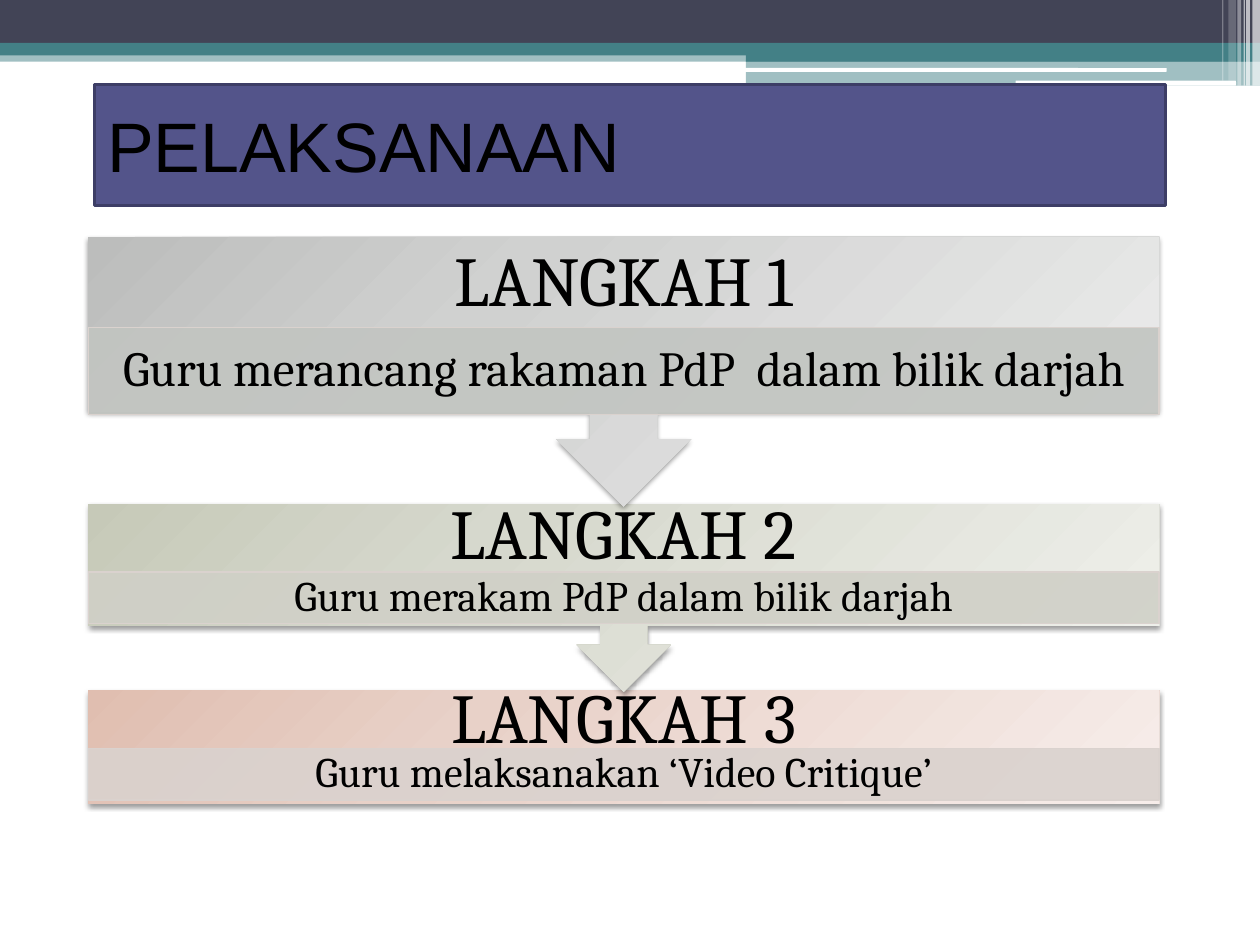
"""Build the PELAKSANAAN slide: three steps joined by arrows under a banded header."""
import pptx
import pptx.dml.color
import pptx.enum.shapes
import pptx.enum.text
import pptx.oxml
import pptx.oxml.ns
import pptx.util
from pptx.util import Inches

COLORS = {
    "navy": "424456", "teal": "438086", "white": "FFFFFF", "black": "000000",
    "title": "53548A", "title_edge": "3D3E66", "band_edge": "DAD2CE",
}
SHAPES = pptx.enum.shapes.MSO_SHAPE
RGB = pptx.dml.color.RGBColor.from_string
NS = pptx.oxml.ns.nsdecls("a")

deck = pptx.Presentation()
deck.slide_width, deck.slide_height = Inches(10), Inches(7.5)
slide = deck.slides.add_slide(deck.slide_layouts[5])


def add_block(preset, box, color, opacity=100):
    block = slide.shapes.add_shape(preset, *map(Inches, box))
    block.shadow.inherit = False
    block.line.fill.background()
    block.fill.solid()
    block.fill.fore_color.rgb = RGB(color)
    if opacity < 100:
        tint = block._element.spPr.find(".//" + pptx.oxml.ns.qn("a:srgbClr"))
        tint.append(pptx.oxml.parse_xml(f'<a:alpha {NS} val="{opacity * 1000}"/>'))
    return block


def add_label(box, wording, size, side_inset):
    label = slide.shapes.add_textbox(*map(Inches, box)).text_frame
    label.word_wrap = True
    label.vertical_anchor = pptx.enum.text.MSO_ANCHOR.MIDDLE
    label.margin_left = label.margin_right = Inches(side_inset)
    label.margin_top = label.margin_bottom = Inches(0.03)
    label.text = wording
    line = label.paragraphs[0]
    line.alignment = pptx.enum.text.PP_ALIGN.CENTER
    line.line_spacing = 0.9
    font = line.runs[0].font
    font.name, font.size = "Cambria", pptx.util.Pt(size)
    font.color.rgb = RGB(COLORS["black"])


header_bars = [
    ((0, 0.4, 10, 0.09), "teal", 50),
    ((0, 0, 10, 0.34), "navy", 100),
    ((0, 0.34, 10, 0.1), "teal", 100),
    ((5.92, 0.39, 4.08, 0.1), "teal", 100),
    ((5.92, 0.48, 4.08, 0.2), "teal", 50),
]
for box, color, opacity in header_bars:
    add_block(SHAPES.RECTANGLE, box, COLORS[color], opacity)

for box in [(5.91, 0.54, 3.35, 0.03), (8.06, 0.64, 1.75, 0.04)]:
    add_block(SHAPES.ROUNDED_RECTANGLE, box, COLORS["white"])

corner_stripes = [
    (9.94, 0.06, 0.68, 65), (9.89, 0.03, 0.68, 65), (9.87, 0.01, 0.68, 60),
    (9.82, 0.03, 0.68, 40), (9.75, 0.06, 0.64, 20), (9.7, 0.01, 0.64, 30),
]
for left, width, height, opacity in corner_stripes:
    add_block(SHAPES.RECTANGLE, (left, 0, width, height), COLORS["white"], opacity)

title = slide.shapes.title
title.left, title.top, title.width, title.height = map(Inches, (0.75, 0.67, 8.5, 0.96))
title.fill.solid()
title.fill.fore_color.rgb = RGB(COLORS["title"])
title.line.color.rgb = RGB(COLORS["title_edge"])
title.line.width = pptx.util.Pt(1.5)
title.text_frame.text = "PELAKSANAAN"
title.text_frame.auto_size = pptx.enum.text.MSO_AUTO_SIZE.NONE
title.text_frame.vertical_anchor = pptx.enum.text.MSO_ANCHOR.MIDDLE
heading = title.text_frame.paragraphs[0]
heading.alignment = pptx.enum.text.PP_ALIGN.LEFT
heading.runs[0].font.name = "Arial"
heading.runs[0].font.size = pptx.util.Pt(40)
heading.runs[0].font.color.rgb = RGB(COLORS["black"])
slide.shapes._spTree.append(title._element)

steps = [
    ("LANGKAH 3", "Guru melaksanakan ‘Video Critique’", 24, SHAPES.RECTANGLE,
     (5.48, 0.9), 0.48, (5.94, 0.41), ("E0BEB0", "E8D1C8", "F7EDEA"), "DAD2CE"),
    ("LANGKAH 2", "Guru merakam PdP dalam bilik darjah", 24, SHAPES.DOWN_ARROW_CALLOUT,
     (4, 1.49), 0.52, (4.54, 0.41), ("C6C9B8", "D6D8CD", "F0F1EC"), "D0D0C7"),
    ("LANGKAH 1", "Guru merancang rakaman PdP  dalam bilik darjah", 28, SHAPES.DOWN_ARROW_CALLOUT,
     (1.88, 2.14), 0.75, (2.6, 0.69), ("BCBDBC", "D0D1D0", "EEEEEE"), "C2C5C1"),
]
left, width = 0.7, 8.5
for name, action, size, preset, (top, height), name_height, (band_top, band_height), shades, band_color in steps:
    step = add_block(preset, (left, top, width, height), shades[0])
    stops = "".join(f'<a:gs pos="{position * 1000}"><a:srgbClr val="{shade}"/></a:gs>'
                    for position, shade in zip((0, 35, 100), shades))
    properties = step._element.spPr
    properties.replace(properties.find(pptx.oxml.ns.qn("a:solidFill")), pptx.oxml.parse_xml(
        f'<a:gradFill {NS}><a:gsLst>{stops}</a:gsLst><a:lin ang="2700000" scaled="0"/></a:gradFill>'))
    properties.find(pptx.oxml.ns.qn("a:effectLst")).append(pptx.oxml.parse_xml(
        f'<a:outerShdw {NS} blurRad="39370" dist="20320" dir="5400000" rotWithShape="0">'
        f'<a:srgbClr val="{COLORS["black"]}"><a:alpha val="38000"/></a:srgbClr></a:outerShdw>'))
    add_label((left, top, width, name_height), name, 40, 0.31)

    band_box = (left, band_top, width, band_height)
    band = add_block(SHAPES.RECTANGLE, band_box, band_color, 90)
    band.line.color.rgb = RGB(COLORS["band_edge"])
    band.line.width = pptx.util.Pt(0.75)
    add_label(band_box, action, size, 0.19)

deck.save("out.pptx")
